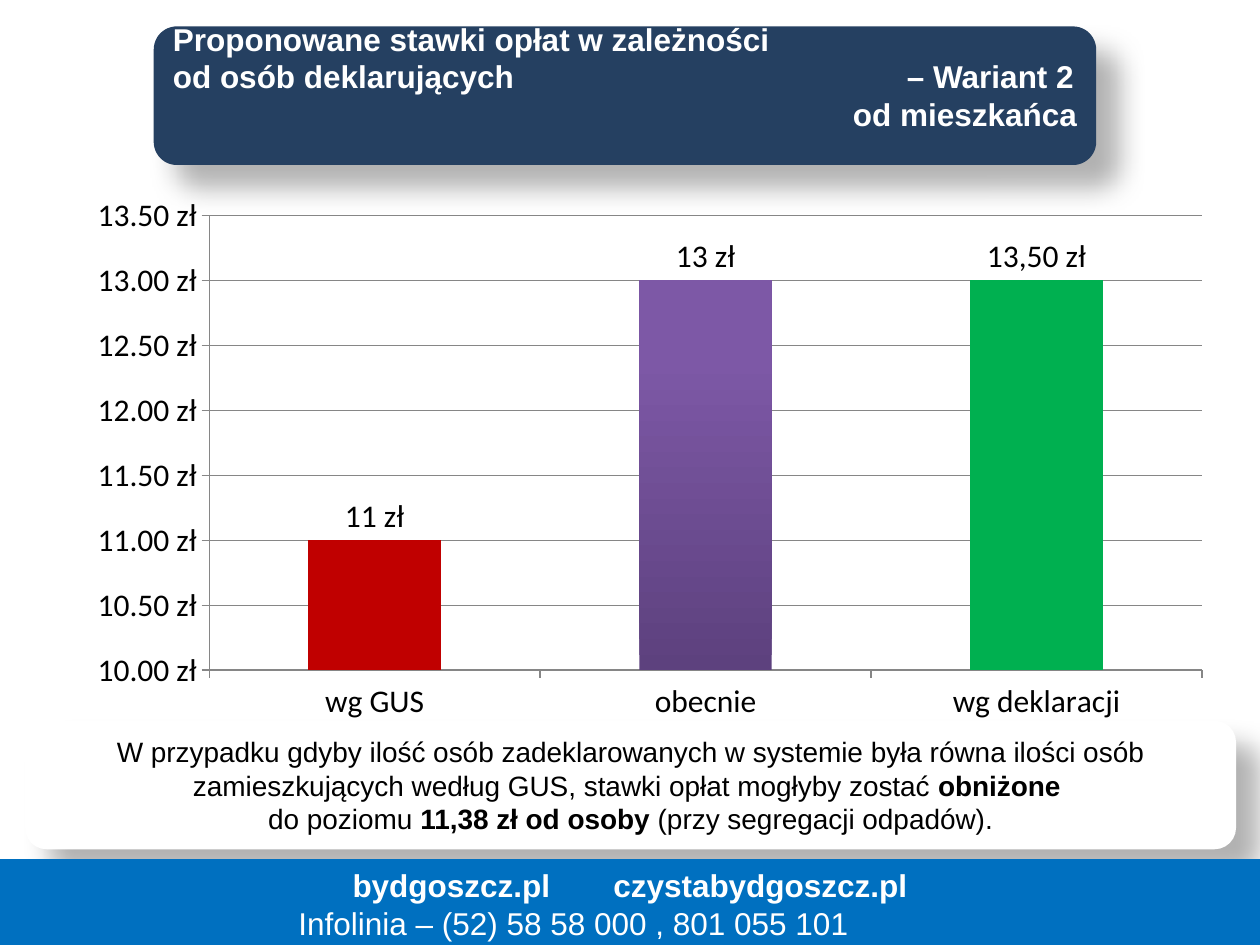
"""Build the slide comparing proposed waste fee rates per resident."""
import pptx
import pptx.chart.data
import pptx.dml.color
import pptx.enum.chart
import pptx.enum.shapes
import pptx.enum.text
import pptx.oxml
import pptx.oxml.ns
import pptx.util
from lxml import etree

Inches, Pt = pptx.util.Inches, pptx.util.Pt
RGBColor = pptx.dml.color.RGBColor
Shape = pptx.enum.shapes.MSO_SHAPE
Align = pptx.enum.text.PP_ALIGN
Anchor = pptx.enum.text.MSO_ANCHOR
qn = pptx.oxml.ns.qn

WHITE = RGBColor(0xFF, 0xFF, 0xFF)
BLACK = RGBColor(0, 0, 0)
NAVY = RGBColor(0x25, 0x40, 0x61)
BLUE = RGBColor(0x00, 0x70, 0xC0)
RED = RGBColor(0xC0, 0, 0)
GREEN = RGBColor(0x00, 0xB0, 0x50)
DARK_PURPLE = RGBColor(0x5D, 0x41, 0x7E)
LIGHT_PURPLE = RGBColor(0x7D, 0x58, 0xA6)
GREY = RGBColor(0x86, 0x86, 0x86)

TITLE = [
    (Align.LEFT, [("Proponowane stawki opłat w zależności\vod osób deklarujących\t– Wariant 2", True)]),
    (Align.RIGHT, [("od mieszkańca", True)]),
]
CAPTION = [
    (Align.CENTER, [
        ("W przypadku gdyby ilość osób zadeklarowanych w systemie była równa ilości osób "
         "zamieszkujących według GUS, stawki opłat mogłyby zostać ", False),
        ("obniżone ", True),
    ]),
    (Align.CENTER, [
        ("do poziomu ", False),
        ("11,38 zł od osoby ", True),
        ("(przy segregacji odpadów).", False),
    ]),
]
FOOTER = [
    (Align.CENTER, [("bydgoszcz.pl \t czystabydgoszcz.pl", True)]),
    (Align.LEFT, [("Infolinia – (52) 58 58 000 , 801 055 101", False)]),
]
PHONE_INDENT = 2.27
RATES = {"wg GUS": 11, "obecnie": 13, "wg deklaracji": 13}
DECLARED_LABEL = "13,50 zł"
LABEL_FORMAT = '#,##0\\ "zł"'
AXIS_FORMAT = '#,##0.00\\ "zł"'
CHART_BOX = (0.59, 1.47, 9.13, 4.33)
PLOT_BOX = (1.07, 0.24, 7.88, 3.61)


def add_panel(slide, preset, box, fill, line=None, line_width=0.75):
    shape = slide.shapes.add_shape(preset, *map(Inches, box))
    shape.shadow.inherit = False
    shape.fill.solid()
    shape.fill.fore_color.rgb = fill
    if line is None:
        shape.line.fill.background()
    else:
        shape.line.color.rgb = line
        shape.line.width = Pt(line_width)
    return shape


def write(shape, paragraphs, size, color, anchor=Anchor.MIDDLE):
    frame = shape.text_frame
    frame.word_wrap = True
    frame.vertical_anchor = anchor
    for index, (alignment, pieces) in enumerate(paragraphs):
        paragraph = frame.add_paragraph() if index else frame.paragraphs[0]
        paragraph.alignment = alignment
        if len(pieces) == 1:
            paragraph.text = pieces[0][0]
        else:
            for text, _ in pieces:
                paragraph.add_run().text = text
        for number, run in enumerate(paragraph.runs):
            font = run.font
            font.name, font.size = "Arial", Pt(size)
            font.bold = pieces[min(number, len(pieces) - 1)][1]
            font.color.rgb = color


def add_right_tab(paragraph, position):
    properties = paragraph._p.get_or_add_pPr()
    tabs = etree.SubElement(properties, qn("a:tabLst"))
    etree.SubElement(tabs, qn("a:tab"), pos=str(Inches(position)), algn="r")


def add_soft_shadow(shape):
    effects = shape._element.spPr.find(qn("a:effectLst"))
    shadow = etree.SubElement(effects, qn("a:outerShdw"), blurRad=str(Pt(15)),
                              dist=str(Pt(18)), dir="2700000", rotWithShape="0")
    color = etree.SubElement(shadow, qn("a:srgbClr"), val="000000")
    etree.SubElement(color, qn("a:alpha"), val="30000")


def set_plot_area(chart):
    plot_area = chart._chartSpace.chart.plotArea
    for old in plot_area.findall(qn("c:layout")):
        plot_area.remove(old)
    layout = etree.Element(qn("c:layout"))
    manual = etree.SubElement(layout, qn("c:manualLayout"))
    etree.SubElement(manual, qn("c:layoutTarget"), val="inner")
    for side in "xy":
        etree.SubElement(manual, qn(f"c:{side}Mode"), val="edge")
    for key, length, whole in zip("xywh", PLOT_BOX, CHART_BOX[2:] * 2):
        etree.SubElement(manual, qn(f"c:{key}"), val=str(length / whole))
    plot_area.insert(0, layout)


def add_rate_chart(slide):
    data = pptx.chart.data.CategoryChartData()
    data.categories = list(RATES)
    data.add_series("Stawka", list(RATES.values()))
    kind = pptx.enum.chart.XL_CHART_TYPE.COLUMN_CLUSTERED
    chart = slide.shapes.add_chart(kind, *map(Inches, CHART_BOX), data).chart
    chart.has_legend = chart.has_title = False
    chart.font.name, chart.font.size = "Calibri", Pt(18)
    chart.font.color.rgb = BLACK
    set_plot_area(chart)

    value_axis = chart.value_axis
    value_axis.minimum_scale, value_axis.maximum_scale = 10, 13.5
    value_axis.major_unit = 0.5
    value_axis.tick_labels.number_format = AXIS_FORMAT
    value_axis.tick_labels.number_format_is_linked = False
    value_axis.major_gridlines.format.line.color.rgb = GREY
    for axis in (value_axis, chart.category_axis):
        axis.format.line.color.rgb = GREY
        axis.major_tick_mark = pptx.enum.chart.XL_TICK_MARK.OUTSIDE

    plot = chart.plots[0]
    plot.gap_width = 150
    plot.vary_by_categories = False
    series = plot.series[0]
    labels = series.data_labels
    labels.show_value = True
    labels.number_format = LABEL_FORMAT
    labels.number_format_is_linked = False
    labels.position = pptx.enum.chart.XL_LABEL_POSITION.OUTSIDE_END
    declared = series.points[2].data_label
    declared.text_frame.text = DECLARED_LABEL
    declared.position = labels.position

    for index, color in ((0, RED), (2, GREEN)):
        fill = series.points[index].format.fill
        fill.solid()
        fill.fore_color.rgb = color
    gradient = series.points[1].format.fill
    gradient.gradient()
    gradient.gradient_angle = 90
    for stop, color, position in zip(gradient.gradient_stops, (DARK_PURPLE, LIGHT_PURPLE), (0, 0.8)):
        stop.color.rgb = color
        stop.position = position


def main():
    presentation = pptx.Presentation()
    presentation.slide_width, presentation.slide_height = Inches(10), Inches(7.5)
    slide = presentation.slides.add_slide(presentation.slide_layouts[6])

    add_panel(slide, Shape.RECTANGLE, (0.67, 0.99, 8.9, 5.75), WHITE, WHITE, 2)

    title = add_panel(slide, Shape.ROUNDED_RECTANGLE, (1.22, 0.21, 7.48, 1.1), NAVY)
    add_soft_shadow(title)
    write(title, TITLE, 18, WHITE, Anchor.BOTTOM)
    title.text_frame.margin_top = 0
    title.text_frame.margin_bottom = Inches(0.2)
    add_right_tab(title.text_frame.paragraphs[0], 7.15)

    caption = add_panel(slide, Shape.ROUNDED_RECTANGLE, (0.2, 5.72, 9.61, 1.02), WHITE)
    add_soft_shadow(caption)
    write(caption, CAPTION, 16, BLACK)

    add_rate_chart(slide)

    footer = add_panel(slide, Shape.RECTANGLE, (0, 6.82, 10, 0.71), BLUE, BLUE)
    write(footer, FOOTER, 18, WHITE)
    phone = footer.text_frame.paragraphs[1]
    phone._p.get_or_add_pPr().set("marL", str(Inches(PHONE_INDENT)))

    presentation.save("out.pptx")


if __name__ == "__main__":
    main()
